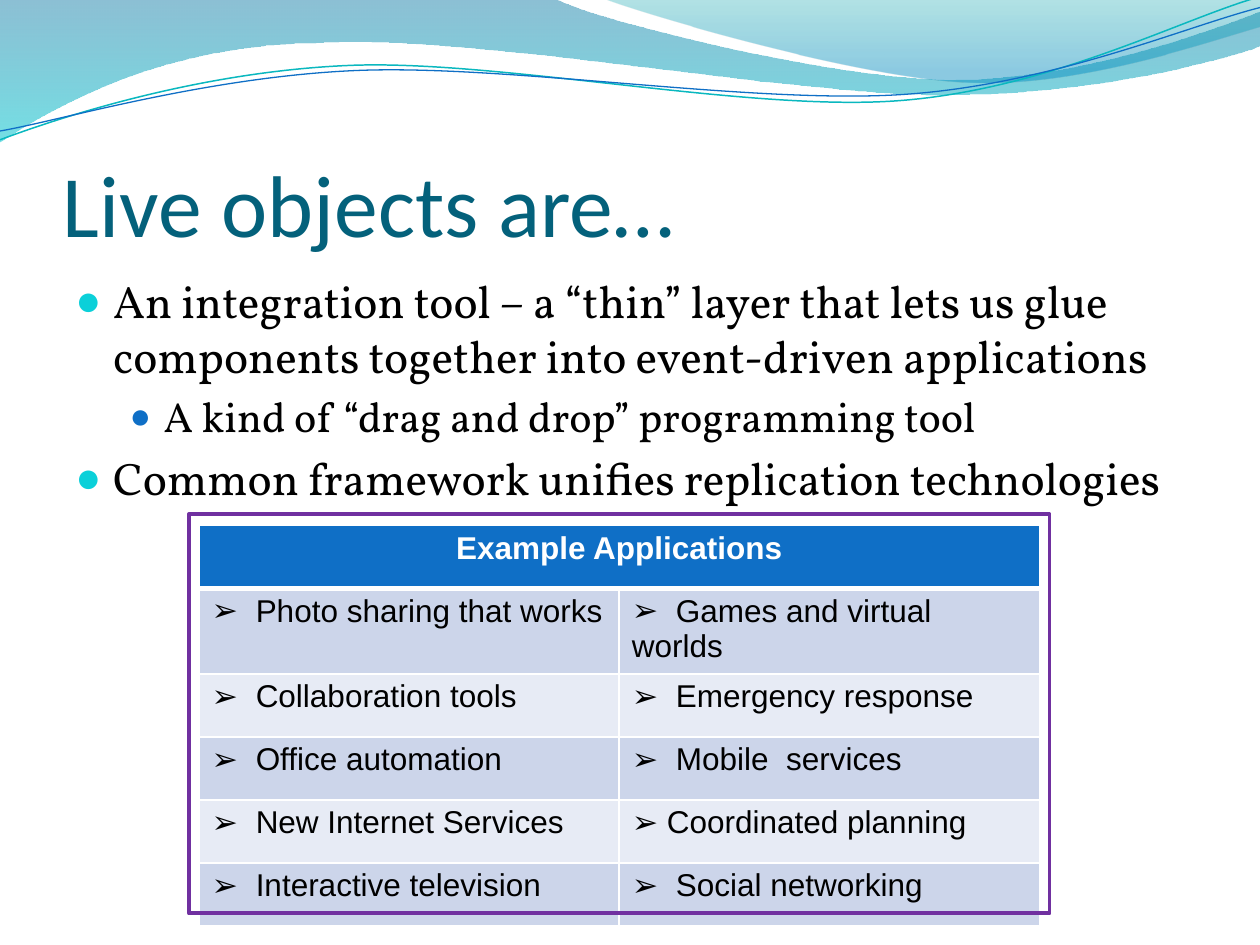
from dataclasses import dataclass

from lxml import etree
from pptx import Presentation
from pptx.dml.color import RGBColor
from pptx.enum.shapes import MSO_SHAPE
from pptx.enum.text import MSO_ANCHOR, PP_ALIGN
from pptx.oxml.ns import qn
from pptx.util import Cm, Pt

RECTANGLE = MSO_SHAPE.RECTANGLE
TOP, BOTTOM = MSO_ANCHOR.TOP, MSO_ANCHOR.BOTTOM
LEFT, CENTER = PP_ALIGN.LEFT, PP_ALIGN.CENTER


@dataclass(frozen=True)
class Theme:
    title_font: str = "Calibri"
    body_font: str = "Vollkorn"
    table_font: str = "Arial"
    title_size: int = 50
    body_sizes: tuple = (26, 24)
    table_size: int = 18
    title: str = "04617B"
    text: str = "000000"
    white: str = "FFFFFF"
    blue: str = "0F6FC6"
    bullets: tuple = ("0BD0D9", "0F6FC6")
    bands: tuple = ("CCD5EA", "E7EBF5")
    frame: str = "7030A0"


THEME = Theme()
TITLE = "Live objects are…"
POINTS = [
    (0, "An integration tool – a “thin” layer that lets us glue "
        "components together into event-driven applications"),
    (1, "A kind of “drag and drop” programming tool"),
    (0, "Common framework unifies replication technologies"),
]
LEVELS = [(0.3, 0.3, 95), (0.7, 0.27, 85)]
TABLE_HEADING = "Example Applications"
APPLICATIONS = [
    ("\tPhoto sharing that works", "\tGames and virtual worlds"),
    ("\tCollaboration tools", "\tEmergency response"),
    ("\tOffice automation", "\tMobile  services"),
    ("\tNew Internet Services", " Coordinated planning"),
    ("\tInteractive television", "\tSocial networking"),
]
NAME_TAB = 0.35
CELL_MARGIN = 0.04

WAVES = [
    ((0, -0.01), [
        [(4.4, -0.01)],
        [(4.76, 0.17), (6.64, 0.63), (7.58, 0.63)],
        [(8.53, 0.63), (9.58, 0.26), (10, 0.09)],
        [(10.01, 0.36)],
        [(9.83, 0.44), (8.7, 0.76), (7.46, 0.75)],
        [(6.22, 0.75), (3.82, 0.28), (2.57, 0.34)],
        [(1.29, 0.35), (0.46, 0.83), (-0.01, 1.13)],
    ], [(0, "0074A1", 45), (1, "00C6CF", 55)]),
    ((4.79, -0.01), [
        [(5.09, 0.11), (6.82, 0.62), (7.69, 0.65)],
        [(8.56, 0.69), (9.61, 0.32), (10, 0.21)],
        [(10, 0)],
    ], [(0, "00A1A9", 30), (0.8, "008BBF", 45)]),
]
STRANDS = [
    ((0, 1.11), [
        [(0.48, 0.93), (1.58, 0.57), (2.77, 0.52)],
        [(3.95, 0.47), (5.93, 0.89), (7.13, 0.8)],
        [(8.33, 0.71), (9.38, 0.15), (9.98, -0.02)],
    ], "0AB8BF", 0.85),
    ((0, 1.04), [
        [(0.47, 0.96), (1.64, 0.61), (2.83, 0.56)],
        [(4.03, 0.51), (5.97, 0.83), (7.17, 0.75)],
        [(8.36, 0.67), (9.41, 0.21), (10, 0.06)],
    ], "0F6FC6", 0.75),
]


def inch(value):
    return Cm(value * 2.54)


def rgb(value):
    return RGBColor.from_string(value)


def add_outline(slide, start, segments, close):
    builder = slide.shapes.build_freeform(*map(inch, start), scale=1.0)
    corners = [tuple(map(inch, corner)) for segment in segments for corner in segment]
    builder.add_line_segments(corners, close=close)
    outline = builder.convert_to_shape()
    outline.shadow.inherit = False
    lines = iter(list(outline.element.spPr.iter(qn("a:lnTo"))))
    for segment in segments:
        steps = [next(lines) for _ in segment]
        if len(steps) == 3:
            curve = etree.Element(qn("a:cubicBezTo"))
            steps[0].addprevious(curve)
            for step in steps:
                curve.append(step[0])
                step.getparent().remove(step)
    return outline


def add_wave(slide, start, segments, stops):
    wave = add_outline(slide, start, segments, True)
    wave.line.fill.background()
    wave.fill.gradient()
    wave.fill.gradient_angle = 270
    for stop, (position, color, _) in zip(wave.fill.gradient_stops, stops):
        stop.position = position
        stop.color.rgb = rgb(color)
    colors = wave.element.spPr.iter(qn("a:srgbClr"))
    for color, (_, _, opacity) in zip(colors, stops):
        etree.SubElement(color, qn("a:alpha"), val=str(opacity * 1000))


def add_strand(slide, start, segments, color, width):
    strand = add_outline(slide, start, segments, False)
    strand.fill.background()
    strand.line.color.rgb = rgb(color)
    strand.line.width = Pt(width)


def add_bullet(paragraph, char, margin, hanging, color, percent):
    props = paragraph._p.get_or_add_pPr()
    props.set("marL", str(inch(margin)))
    props.set("indent", str(-inch(hanging)))
    bullet_color = etree.SubElement(props, qn("a:buClr"))
    etree.SubElement(bullet_color, qn("a:srgbClr"), val=color)
    etree.SubElement(props, qn("a:buSzPct"), val=str(percent * 1000))
    etree.SubElement(props, qn("a:buFont"), typeface="Arial")
    etree.SubElement(props, qn("a:buChar"), char=char)


def add_tab(paragraph, position):
    tabs = etree.SubElement(paragraph._p.get_or_add_pPr(), qn("a:tabLst"))
    etree.SubElement(tabs, qn("a:tab"), pos=str(inch(position)), algn="l")


def write(paragraph, text, font, size, color, align=LEFT, bold=False):
    paragraph.text = text
    paragraph.alignment = align
    paragraph.font.name = font
    paragraph.font.size = Pt(size)
    paragraph.font.bold = bold
    paragraph.font.color.rgb = rgb(color)


def add_text_frame(slide, box, anchor):
    frame = slide.shapes.add_textbox(*map(inch, box)).text_frame
    frame.word_wrap = True
    frame.vertical_anchor = anchor
    return frame


def add_points(slide):
    frame = add_text_frame(slide, (0.5, 2.12, 9, 4.8), TOP)
    for index, (level, text) in enumerate(POINTS):
        paragraph = frame.add_paragraph() if index else frame.paragraphs[0]
        size = THEME.body_sizes[level]
        margin, hanging, percent = LEVELS[level]
        paragraph.level = level
        add_bullet(paragraph, "●", margin, hanging, THEME.bullets[level], percent)
        paragraph.space_before = Pt(size * 0.2)
        write(paragraph, text, THEME.body_font, size, THEME.text)


def paint_cell(cell, fill, top=1, bottom=1):
    cell.margin_top = cell.margin_bottom = inch(CELL_MARGIN)
    cell.fill.solid()
    cell.fill.fore_color.rgb = rgb(fill)
    props = cell._tc.get_or_add_tcPr()
    for index, (side, width) in enumerate(zip("LRTB", (1, 1, top, bottom))):
        border = etree.Element(qn(f"a:ln{side}"), w=str(Pt(width)))
        solid = etree.SubElement(border, qn("a:solidFill"))
        etree.SubElement(solid, qn("a:srgbClr"), val=THEME.white)
        props.insert(index, border)


def add_applications(slide):
    rows = len(APPLICATIONS) + 1
    table = slide.shapes.add_table(
        rows, 2, *map(inch, (1.58, 4.17, 6.67, rows * 0.5))).table
    table.horz_banding = False
    for cell in table.rows[0].cells:
        paint_cell(cell, THEME.blue, bottom=3)
    heading = table.cell(0, 0)
    heading.merge(table.cell(0, 1))
    write(heading.text_frame.paragraphs[0], TABLE_HEADING, THEME.table_font,
          THEME.table_size, THEME.white, CENTER, True)
    for row, names in enumerate(APPLICATIONS, 1):
        for column, name in enumerate(names):
            cell = table.cell(row, column)
            paint_cell(cell, THEME.bands[(row - 1) % 2], top=3 if row == 1 else 1)
            paragraph = cell.text_frame.paragraphs[0]
            add_bullet(paragraph, "➢", 0, 0, THEME.text, 100)
            add_tab(paragraph, NAME_TAB)
            write(paragraph, name, THEME.table_font, THEME.table_size, THEME.text)


def main():
    deck = Presentation()
    deck.slide_width, deck.slide_height = inch(10), inch(7.5)
    slide = deck.slides.add_slide(deck.slide_layouts[6])
    for wave in WAVES:
        add_wave(slide, *wave)
    for strand in STRANDS:
        add_strand(slide, *strand)
    title = add_text_frame(slide, (0.5, 0.77, 9, 1.25), BOTTOM)
    title.margin_left = title.margin_right = title.margin_bottom = 0
    write(title.paragraphs[0], TITLE, THEME.title_font, THEME.title_size, THEME.title)
    add_points(slide)
    add_applications(slide)
    frame = slide.shapes.add_shape(RECTANGLE, *map(inch, (1.5, 4.08, 6.83, 3.17)))
    frame.shadow.inherit = False
    frame.fill.background()
    frame.line.color.rgb = rgb(THEME.frame)
    frame.line.width = Pt(2.25)
    deck.save("out.pptx")


if __name__ == "__main__":
    main()
